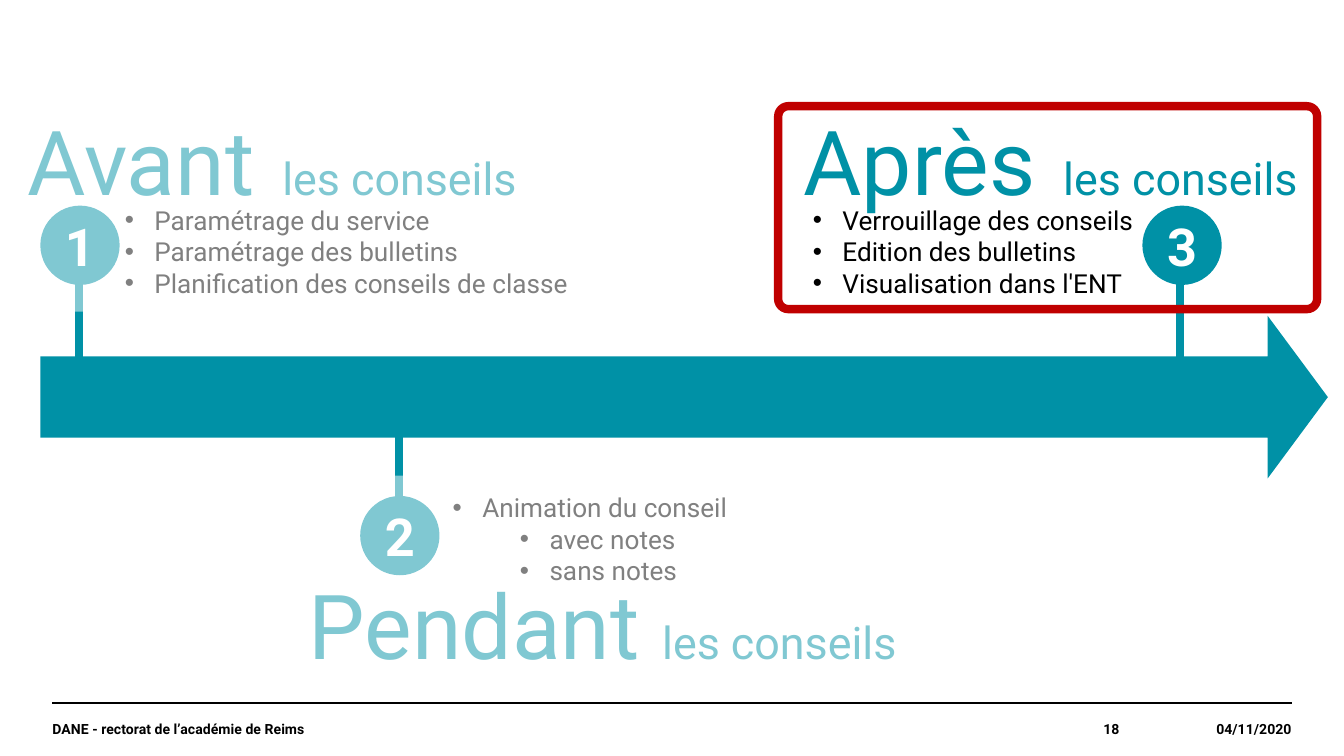
from dataclasses import dataclass

from lxml import etree
from pptx import Presentation
from pptx.dml.color import RGBColor
from pptx.enum.shapes import MSO_CONNECTOR, MSO_SHAPE
from pptx.enum.text import MSO_ANCHOR, MSO_AUTO_SIZE, PP_ALIGN
from pptx.oxml.ns import qn
from pptx.util import Inches, Pt

LEFT, MID, RIGHT = PP_ALIGN.LEFT, PP_ALIGN.CENTER, PP_ALIGN.RIGHT
TOP, CENTER = MSO_ANCHOR.TOP, MSO_ANCHOR.MIDDLE
GROW = MSO_AUTO_SIZE.SHAPE_TO_FIT_TEXT
STRAIGHT = MSO_CONNECTOR.STRAIGHT
OVAL, RECT = MSO_SHAPE.OVAL, MSO_SHAPE.RECTANGLE
ROUND, ARROW = MSO_SHAPE.ROUNDED_RECTANGLE, MSO_SHAPE.RIGHT_ARROW

Box = tuple[float, float, float, float]
Runs = list[tuple[str, float]]


@dataclass(frozen=True)
class Theme:
    font: str = "Roboto"
    teal: str = "0091A6"
    red: str = "C00000"
    black: str = "000000"
    white: str = "FFFFFF"
    word: float = 48
    gap: float = 60
    tail: float = 24
    digit: float = 28
    body: float = 14
    foot: float = 7.5
    thick: float = 4.5
    thin: float = 0.8
    dot: float = 0.59


@dataclass(frozen=True)
class Step:
    num: str
    title: Runs
    head: Box
    items: list[tuple[int, str]]  # (level, text)
    list_box: Box
    dot: tuple[float, float]
    stem: tuple[float, float, float]  # x, start y, end y
    knob: bool = True


T = Theme()
TAIL = ("les conseils", T.tail)

STEPS = [
    Step("1", [("Avant", T.word), (" ", T.gap), TAIL], (0.11, 0.57, 4.18, 1.11),
         [(0, "Paramétrage du service"), (0, "Paramétrage des bulletins"),
          (0, "Planification des conseils de classe")],
         (0.83, 1.47, 3.55, 0.87), (0.3, 1.53), (0.59, 2.87, 1.77)),
    Step("2", [("Pendant ", T.word), TAIL], (2.2, 4.19, 5.41, 0.91),
         [(0, "Animation du conseil"), (1, "avec notes"), (1, "sans notes")],
         (3.27, 3.61, 2.78, 0.71), (2.68, 3.69), (2.97, 3.69, 3.13), False),
    Step("3", [("Après", T.word), (" ", T.gap), TAIL], (5.88, 0.57, 4.16, 1.11),
         [(0, "Verrouillage des conseils"), (0, "Edition des bulletins"),
          (0, "Visualisation dans l'ENT")],
         (5.95, 1.47, 3.86, 0.88), (8.5, 1.53), (8.78, 2.66, 1.95)),
]
FOOT = [
    ("DANE - rectorat de l’académie de Reims", (0.39, 5.23, 6.46, 0.39), LEFT),
    ("18", (6.85, 5.23, 1.48, 0.39), RIGHT),
    ("04/11/2020", (8.33, 5.23, 1.28, 0.39), RIGHT),
]
VEILS = [(0.17, 0.89, 4.29, 1.43), (2.14, 3.54, 4.83, 1.43)]


def write(para, runs: Runs, *, color=T.black, bold=False, align=LEFT) -> None:
    """Add formatted runs to a paragraph."""
    para.alignment = align
    for text, size in runs:
        run = para.add_run()
        run.text = text
        font = run.font
        font.name, font.size, font.bold = T.font, Pt(size), bold
        font.color.rgb = RGBColor.from_string(color)


def set_frame(shape, *, anchor=TOP, flush=False):
    """Prepare a text frame, with no margins when flush."""
    frame = shape.text_frame
    frame.word_wrap = True
    frame.vertical_anchor = anchor
    if flush:
        frame.margin_left = frame.margin_right = 0
        frame.margin_top = frame.margin_bottom = 0
    return frame


def add_box(slide, box: Box):
    return slide.shapes.add_textbox(*map(Inches, box))


def add_form(slide, kind, box: Box, *, fill=None, line=None):
    shape = slide.shapes.add_shape(kind, *map(Inches, box))
    shape.shadow.inherit = False
    if fill:
        shape.fill.solid()
        shape.fill.fore_color.rgb = RGBColor.from_string(fill)
    else:
        shape.fill.background()
    if line:
        shape.line.color.rgb = RGBColor.from_string(line)
        shape.line.width = Pt(T.thick)
    else:
        shape.line.fill.background()
    return shape


def add_line(slide, box: Box, color: str, width: float, knob=False) -> None:
    """Draw a line from (x1, y1) to (x2, y2), with a round end if asked."""
    link = slide.shapes.add_connector(STRAIGHT, *map(Inches, box))
    link.line.color.rgb = RGBColor.from_string(color)
    link.line.width = Pt(width)
    props = link._element.spPr
    if knob:
        etree.SubElement(props.find(qn("a:ln")), qn("a:tailEnd"), type="oval")
    etree.SubElement(props, qn("a:effectLst"))


def add_list(slide, step: Step) -> None:
    frame = set_frame(add_box(slide, step.list_box))
    for i, (level, text) in enumerate(step.items):
        para = frame.add_paragraph() if i else frame.paragraphs[0]
        para.level = level
        props = para._p.get_or_add_pPr()
        props.set("marL", str(Inches(0.22 + 0.5 * level)))
        props.set("indent", str(Inches(-0.22)))
        etree.SubElement(props, qn("a:buFont"), typeface="Arial")
        etree.SubElement(props, qn("a:buChar"), char="•")
        write(para, [(text, T.body)])


def add_step(slide, step: Step) -> None:
    x, start, end = step.stem
    add_line(slide, (x, start, x, end), T.teal, T.thick, step.knob)
    dot = add_form(slide, OVAL, (*step.dot, T.dot, T.dot), fill=T.teal)
    frame = set_frame(dot, anchor=CENTER, flush=True)
    write(frame.paragraphs[0], [(step.num, T.digit)],
          color=T.white, bold=True, align=MID)
    frame = set_frame(add_box(slide, step.head))
    frame.auto_size = GROW
    write(frame.paragraphs[0], step.title, color=T.teal)
    add_list(slide, step)


def add_veil(slide, box: Box) -> None:
    """Fade a step with a half-transparent white sheet."""
    veil = add_form(slide, RECT, box, fill=T.white)
    tint = veil._element.spPr.find(qn("a:solidFill"))[0]
    etree.SubElement(tint, qn("a:alpha"), val="50000")


def main() -> None:
    # Widescreen slide, 16:9
    deck = Presentation()
    deck.slide_width = Inches(10)
    deck.slide_height = Inches(10 * 9 / 16)
    slide = deck.slides.add_slide(deck.slide_layouts[6])

    # Footer
    add_line(slide, (0.39, 5.23, 9.61, 5.23), T.black, T.thin)
    for text, box, align in FOOT:
        frame = set_frame(add_box(slide, box), anchor=CENTER, flush=True)
        write(frame.paragraphs[0], [(text, T.foot)], bold=True, align=align)

    # Time arrow and its steps
    arrow = add_form(slide, ARROW, (0.3, 2.35, 9.58, 1.21), fill=T.teal)
    arrow.adjustments[1] = 0.37
    for step in STEPS:
        add_step(slide, step)

    # Frame on the current step, veils on the others
    frame = add_form(slide, ROUND, (5.79, 0.79, 4.01, 1.51), line=T.red)
    frame.adjustments[0] = 0.05
    for box in VEILS:
        add_veil(slide, box)

    deck.save("out.pptx")


if __name__ == "__main__":
    main()
